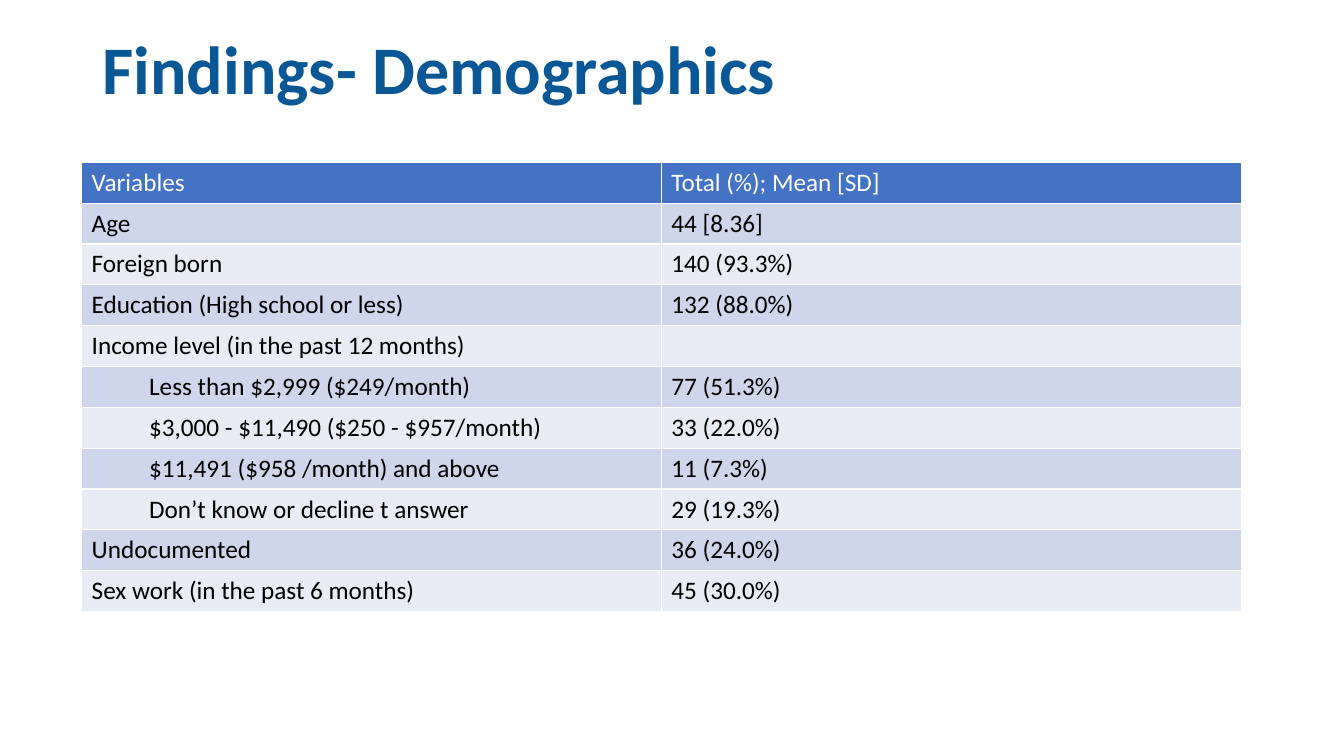
from pptx import Presentation
from pptx.dml.color import RGBColor
from pptx.enum import text
from pptx.util import Inches, Pt

FONT = "Calibri"
TITLE_BLUE = RGBColor(0x09, 0x58, 0x95)
HEADER_BLUE = RGBColor(0x44, 0x72, 0xC4)
BAND_DARK = RGBColor(0xCF, 0xD5, 0xEA)
BAND_LIGHT = RGBColor(0xE9, 0xEB, 0xF5)
WHITE = RGBColor(0xFF, 0xFF, 0xFF)
BLACK = RGBColor(0, 0, 0)

CELL_MARGIN = 0.1
SUBLEVEL_INDENT = 0.57

# Each row: indent level, variable, value
HEADER = (0, "Variables", "Total (%); Mean [SD]")
DEMOGRAPHICS = [
    (0, "Age", "44 [8.36]"),
    (0, "Foreign born", "140 (93.3%)"),
    (0, "Education (High school or less)", "132 (88.0%)"),
    (0, "Income level (in the past 12 months)", ""),
    (1, "Less than $2,999 ($249/month)", "77 (51.3%)"),
    (1, "$3,000 - $11,490 ($250 - $957/month)", "33 (22.0%)"),
    (1, "$11,491 ($958 /month) and above", "11 (7.3%)"),
    (1, "Don’t know or decline t answer", "29 (19.3%)"),
    (0, "Undocumented", "36 (24.0%)"),
    (0, "Sex work (in the past 6 months)", "45 (30.0%)"),
]


def add_span(para, words, size, color, bold=False):
    span = para.add_run()
    span.text = words
    span.font.name = FONT
    span.font.size = Pt(size)
    span.font.bold = bold
    span.font.color.rgb = color


def add_title(page, left, top, width, height, words):
    box = page.shapes.add_textbox(
        Inches(left), Inches(top), Inches(width), Inches(height))
    frame = box.text_frame
    frame.word_wrap = True
    frame.vertical_anchor = text.MSO_ANCHOR.MIDDLE
    para = frame.paragraphs[0]
    para.line_spacing = 0.9
    add_span(para, words, 48.6, TITLE_BLUE, bold=True)


def add_demographics_table(page, left, top, width, height):
    rows = [HEADER] + DEMOGRAPHICS
    # Equal rows and columns; the table style draws the white borders
    table = page.shapes.add_table(
        len(rows), 2, Inches(left), Inches(top),
        Inches(width), Inches(height)).table
    for index, (level, *entries) in enumerate(rows):
        if index == 0:
            fill, color = HEADER_BLUE, WHITE
        else:
            fill, color = (BAND_DARK if index % 2 else BAND_LIGHT), BLACK
        for column, words in enumerate(entries):
            cell = table.cell(index, column)
            cell.fill.solid()
            cell.fill.fore_color.rgb = fill
            if words:
                add_span(cell.text_frame.paragraphs[0], words, 18, color)
        table.cell(index, 0).margin_left = Inches(
            CELL_MARGIN + level * SUBLEVEL_INDENT)


def main():
    deck = Presentation()
    deck.slide_width = Inches(13.33)
    deck.slide_height = Inches(7.5)
    page = deck.slides.add_slide(deck.slide_layouts[6])
    add_title(page, 0.92, 0.26, 11.5, 0.91, "Findings- Demographics")
    add_demographics_table(page, 0.81, 1.61, 11.5, 4.46)
    deck.save("out.pptx")


if __name__ == "__main__":
    main()
